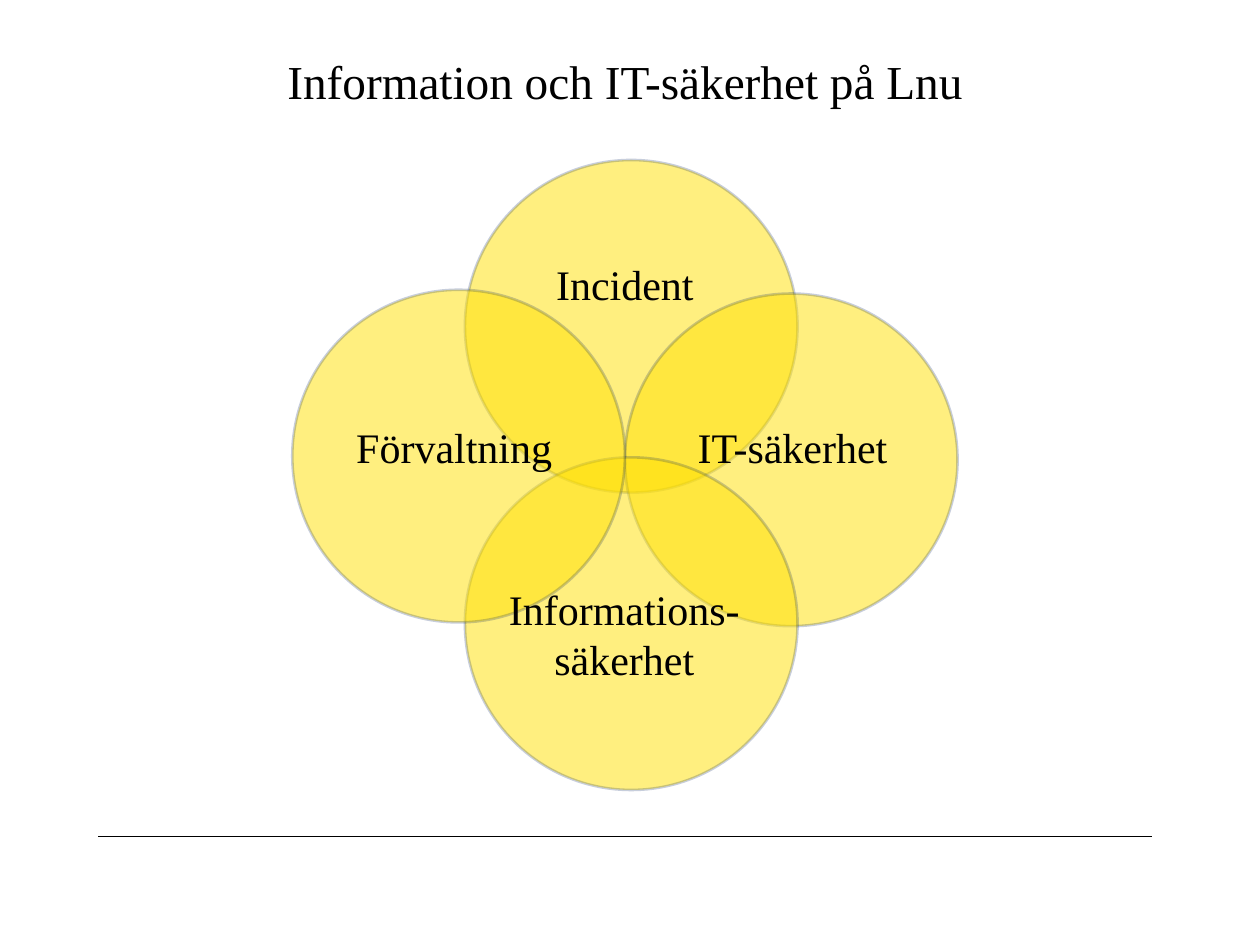
from lxml.etree import SubElement
from pptx import Presentation
from pptx.dml.color import RGBColor
from pptx.enum.shapes import MSO_CONNECTOR, MSO_SHAPE
from pptx.enum.text import MSO_ANCHOR, PP_ALIGN
from pptx.oxml.ns import qn
from pptx.util import Inches, Pt

BLACK = RGBColor(0x00, 0x00, 0x00)
YELLOW = RGBColor(0xFF, 0xE0, 0x00)
NAVY = RGBColor(0x00, 0x20, 0x60)

TITLE = "Information och IT-säkerhet på Lnu"
DIAMETER = 2.64
CIRCLES = [(3.69, 1.27), (4.96, 2.33), (3.69, 3.63), (2.32, 2.3)]
# text, (left, top, width, height), wraps
LABELS = [
    ("Incident", (4.31, 2, 1.3, 0.5), False),
    ("IT-säkerhet", (5.43, 3.3, 1.72, 0.5), False),
    ("Förvaltning", (2.72, 3.3, 1.77, 0.5), False),
    ("Informations-säkerhet", (3.5, 4.58, 2.91, 0.91), True),
]
MARGIN, CONTENT_WIDTH = 0.78, 8.36
TITLE_BOX = (MARGIN, 0.44, CONTENT_WIDTH, 0.83)
RULE_Y = 6.64


def write(frame, text, size):
    frame.text = text
    paragraph = frame.paragraphs[0]
    paragraph.alignment = PP_ALIGN.CENTER
    font = paragraph.runs[0].font
    for name, value in {"name": "Times New Roman", "size": Pt(size), "bold": False}.items():
        setattr(font, name, value)
    font.color.rgb = BLACK
    return paragraph


def set_opacity(fill_parent, percent):
    """Give the solid fill directly under an XML element an opacity."""
    color = fill_parent.find(qn("a:solidFill"))[0]
    SubElement(color, qn("a:alpha")).set("val", str(percent * 1000))


def add_circle(shapes, left, top):
    circle = shapes.add_shape(MSO_SHAPE.OVAL, *map(Inches, (left, top, DIAMETER, DIAMETER)))
    circle.shadow.inherit = False
    circle.fill.solid()
    circle.fill.fore_color.rgb = YELLOW
    circle.line.color.rgb = NAVY
    circle.line.width = Pt(1.5)
    properties = circle.element.spPr
    set_opacity(properties, 50)
    set_opacity(properties.find(qn("a:ln")), 21)


def main():
    presentation = Presentation()
    presentation.slide_width, presentation.slide_height = Inches(10), Inches(7.5)
    slide = presentation.slides.add_slide(presentation.slide_layouts[5])

    rule = slide.shapes.add_connector(
        MSO_CONNECTOR.STRAIGHT,
        *map(Inches, (MARGIN, RULE_Y, MARGIN + CONTENT_WIDTH, RULE_Y)))
    rule.line.color.rgb = BLACK
    rule.line.width = Pt(0.5)
    SubElement(rule.element.spPr, qn("a:effectLst"))

    title = slide.shapes.title
    for side, value in zip(("left", "top", "width", "height"), TITLE_BOX):
        setattr(title, side, Inches(value))
    title.text_frame.vertical_anchor = MSO_ANCHOR.TOP
    write(title.text_frame, TITLE, 27).line_spacing = Pt(27)

    circles = slide.shapes.add_group_shape()
    for left, top in CIRCLES:
        add_circle(circles.shapes, left, top)

    for text, box, wraps in LABELS:
        frame = slide.shapes.add_textbox(*map(Inches, box)).text_frame
        frame.word_wrap = wraps
        write(frame, text, 24)

    presentation.save("out.pptx")


if __name__ == "__main__":
    main()
